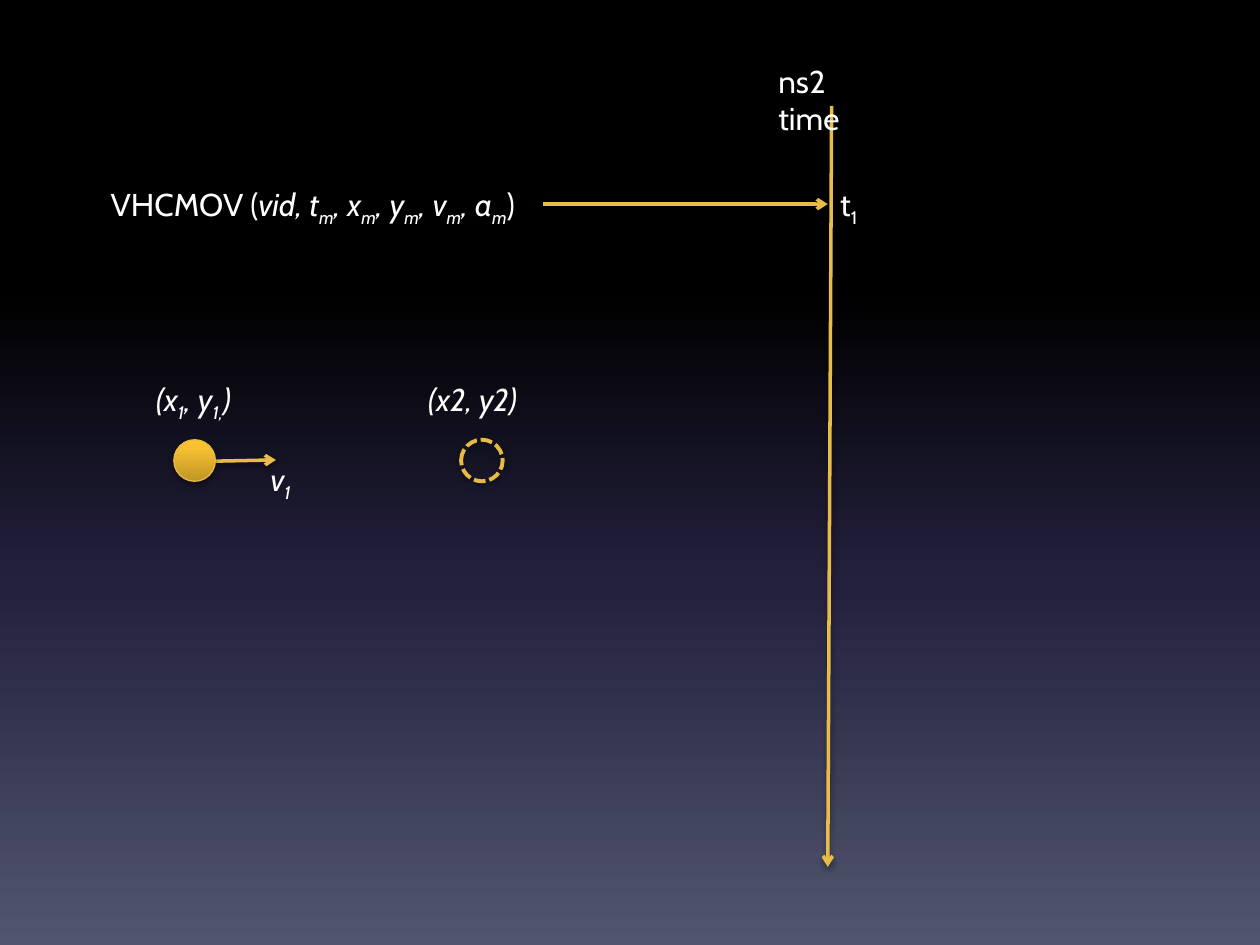
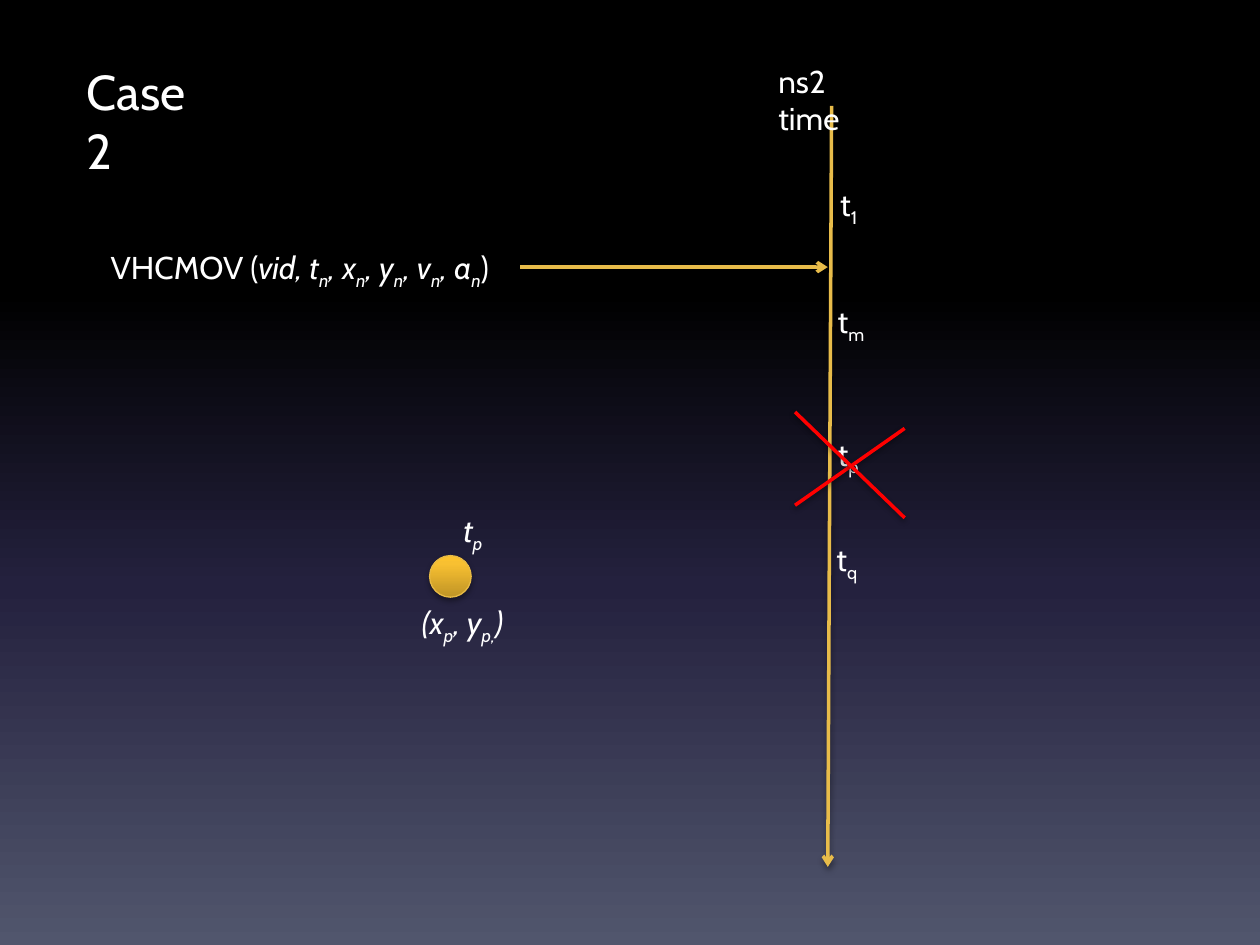
"""Draw two slides on how vehicle moves meet the simulator's time axis."""
from dataclasses import dataclass

from lxml import etree
from pptx import Presentation
from pptx.dml.color import RGBColor
from pptx.enum.dml import MSO_LINE
from pptx.enum.shapes import MSO_CONNECTOR, MSO_SHAPE
from pptx.enum.text import MSO_AUTO_SIZE
from pptx.oxml import parse_xml
from pptx.oxml.ns import nsdecls, qn
from pptx.util import Inches, Pt

OVAL = MSO_SHAPE.OVAL
LINE = MSO_CONNECTOR.STRAIGHT
DASH = MSO_LINE.SQUARE_DOT
GROW = MSO_AUTO_SIZE.SHAPE_TO_FIT_TEXT
RIGHT = 3

COLS, ROWS = 100, 75
WIDTH, HEIGHT = Inches(10), Inches(7.5)
FONT = "Cabin"
WHITE, RED, GOLD, RIM = "FFFFFF", "FF0000", "E8BC4A", "E7BA45"
NIGHT = [(0, "000000"), (31, "000000"), (62, "24213E"), (100, "51566D")]
BALL = [(0, "BF9426"), (80, "F8C031"), (100, "FDC32D")]
DOWN, UP = 270, 90
ROW, SIZE = 4, 3.3
AXIS = 65.7


@dataclass
class Label:
    """Text at a grid place; _x_ lowers x and *x* slants it."""
    x: float
    y: float
    wide: float
    text: str


@dataclass
class Stroke:
    """A straight line between two grid points."""
    x1: float
    y1: float
    x2: float
    y2: float


SHAFT = Stroke(66, 8.4, AXIS, 68.8)
CLOCK = Label(60.8, 4.4, 11, "ns2 time")
FIRST = Label(AXIS, 14.2, 3.7, "t_1_")
CASE = Label(5.9, 4.4, 12.6, "Case 2")
STATE = [
    Label(11.4, 29.7, 9.7, "*(x_1_, y_1,_)*"),
    Label(20.5, 36, 4.4, "*v_1_*"),
    Label(33, 29.7, 10.2, "*(x2, y2)*"),
]
TICKS = [
    Label(65.5, 23.5, 4.3, "t_m_"),
    Label(65.5, 34, 3.8, "t_p_"),
    Label(65.4, 42.4, 3.8, "t_q_"),
    Label(35.8, 40.1, 4.2, "*t_p_*"),
    Label(32.5, 47.4, 9.8, "*(x_p_, y_p,_)*"),
]
CROSS = [Stroke(71.8, 34, 63.1, 40.1), Stroke(63.1, 32.7, 71.8, 41.1)]


def col(n: float) -> int:
    """Turn columns into a length."""
    return round(WIDTH * n / COLS)


def row(n: float) -> int:
    """Turn rows into a length."""
    return round(HEIGHT * n / ROWS)


def rgb(code: str) -> RGBColor:
    """Turn a hex string into a colour."""
    return RGBColor.from_string(code)


def blend(fill, node, stops: list, angle: int) -> None:
    """Give a fill a gradient with the listed stops."""
    fill.gradient()
    fill.gradient_angle = angle
    ramp = next(node.iter(qn("a:gsLst")))
    for stop in list(ramp):
        ramp.remove(stop)
    for share, code in stops:
        stop = etree.SubElement(ramp, qn("a:gs"), pos=str(share * 1000))
        etree.SubElement(stop, qn("a:srgbClr"), val=code)


def shade(shape, drop: float, alpha: int) -> None:
    """Add a soft shadow below a shape or line."""
    props = shape._element.spPr
    for old in props.findall(qn("a:effectLst")):
        props.remove(old)
    props.append(parse_xml(
        f'<a:effectLst {nsdecls("a")}><a:outerShdw blurRad="{Pt(3.1)}" '
        f'dist="{Pt(drop)}" dir="5400000" rotWithShape="0">'
        f'<a:srgbClr val="000000"><a:alpha val="{alpha * 1000}"/></a:srgbClr>'
        f'</a:outerShdw></a:effectLst>'))


def write(slide, label: Label, *, size: int = 18, tall: float = ROW,
          fold: bool = False):
    """Write a label and return its box."""
    box = slide.shapes.add_textbox(
        col(label.x), row(label.y), col(label.wide), row(tall))
    frame = box.text_frame
    frame.word_wrap = fold
    frame.auto_size = GROW
    if fold:
        frame.margin_right = col(3.2)
    para = frame.paragraphs[0]
    for i, part in enumerate(label.text.split("*")):
        for j, piece in enumerate(part.split("_")):
            if not piece:
                continue
            run = para.add_run()
            run.text = piece
            font = run.font
            font.name, font.size = FONT, Pt(size)
            font.italic = i % 2 == 1
            font.color.rgb = rgb(WHITE)
            if j % 2:
                run._r.get_or_add_rPr().set("baseline", "-25000")
    return box


def draw(slide, path: Stroke, *, color: str = GOLD, arrow: bool = True):
    """Draw a line, with an arrowhead if asked."""
    line = slide.shapes.add_connector(
        LINE, col(path.x1), row(path.y1), col(path.x2), row(path.y2))
    line.line.color.rgb = rgb(color)
    line.line.width = Pt(2)
    if arrow:
        etree.SubElement(line.line._get_or_add_ln(), qn("a:tailEnd"),
                         type="arrow")
    shade(line, 1.6, 38)
    return line


def disc(slide, x: float, y: float, *, solid: bool = True) -> None:
    """Draw a vehicle, solid when present and dashed when expected."""
    dot = slide.shapes.add_shape(OVAL, col(x), row(y), col(SIZE), row(SIZE))
    dot.line.color.rgb = rgb(RIM)
    if solid:
        blend(dot.fill, dot._element, BALL, UP)
        dot.line.width = Pt(0.75)
    else:
        dot.fill.background()
        dot.line.width = Pt(2.25)
        dot.line.dash_style = DASH
    shade(dot, 1.8, 35)


def start(deck, y: float, wide: float, mark: str):
    """Add a slide with the time axis and a message pointing to it."""
    slide = deck.slides.add_slide(deck.slide_layouts[6])
    terms = ", ".join(f"{name}_{mark}_" for name in "txyva")
    note = Label(7.8, y, wide, f"VHCMOV (*vid, {terms}*)")
    box = write(slide, note)
    mid = y + ROW / 2
    line = draw(slide, Stroke(note.x + wide, mid, AXIS, mid))
    line.begin_connect(box, RIGHT)
    draw(slide, SHAFT)
    write(slide, CLOCK, fold=True)
    write(slide, FIRST)
    return slide


def move(deck) -> None:
    """Build the slide where a vehicle starts to move."""
    slide = start(deck, 14.2, 35.3, "m")
    draw(slide, Stroke(17.1, 36.6, 21.9, 36.5))
    disc(slide, 13.8, 34.9)
    disc(slide, 36.6, 34.9, solid=False)
    for label in STATE:
        write(slide, label)


def case(deck) -> None:
    """Build the slide where a planned event is dropped."""
    slide = start(deck, 19.2, 33.5, "n")
    disc(slide, 34.1, 44.1)
    for label in TICKS:
        write(slide, label)
    for path in CROSS:
        draw(slide, path, color=RED, arrow=False)
    write(slide, CASE, size=28, tall=5.7, fold=True)


def main() -> None:
    """Build and save the deck."""
    deck = Presentation()
    deck.slide_width, deck.slide_height = WIDTH, HEIGHT
    base = deck.slide_master
    blend(base.background.fill, base._element, NIGHT, DOWN)
    move(deck)
    case(deck)
    deck.save("out.pptx")


if __name__ == "__main__":
    main()
